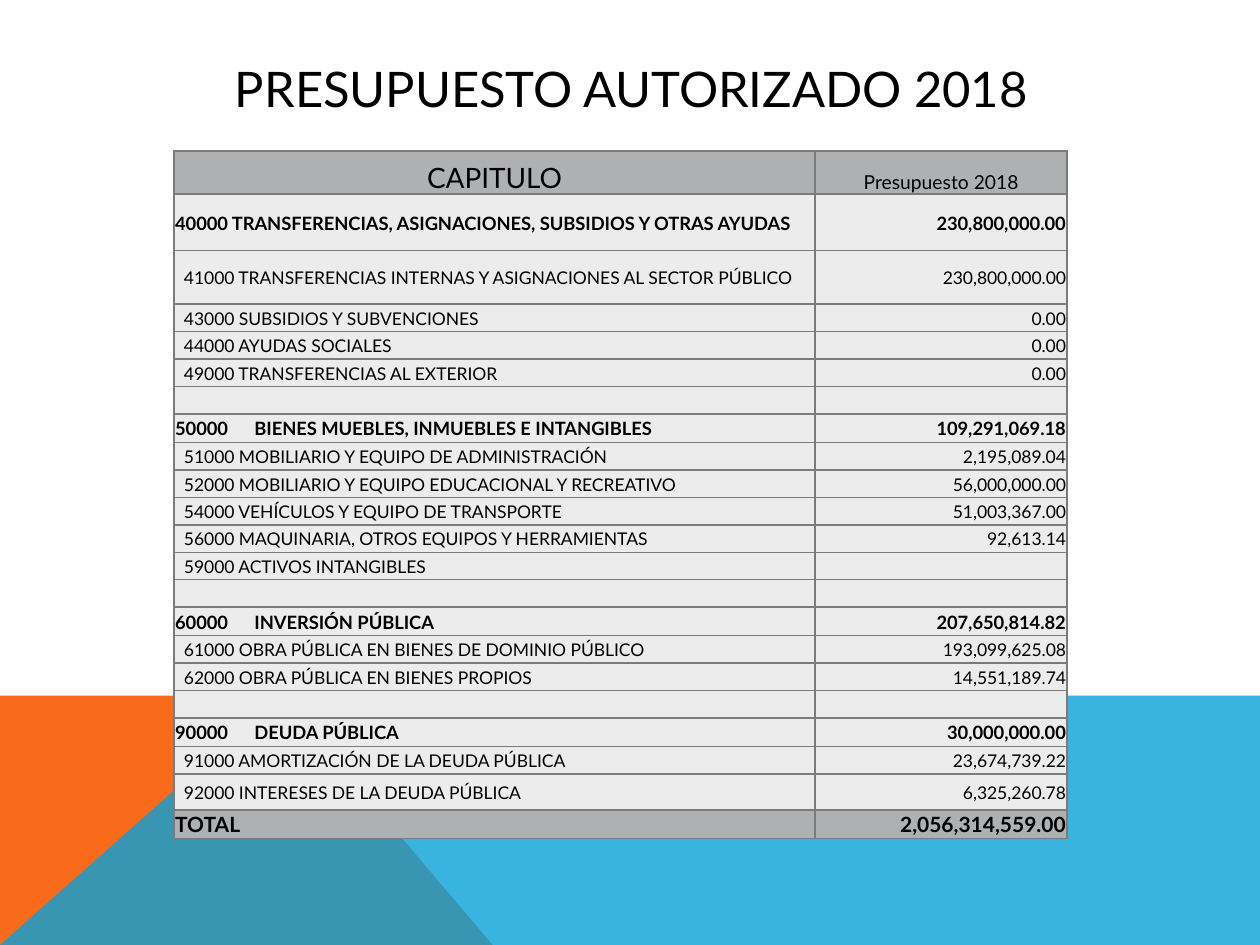
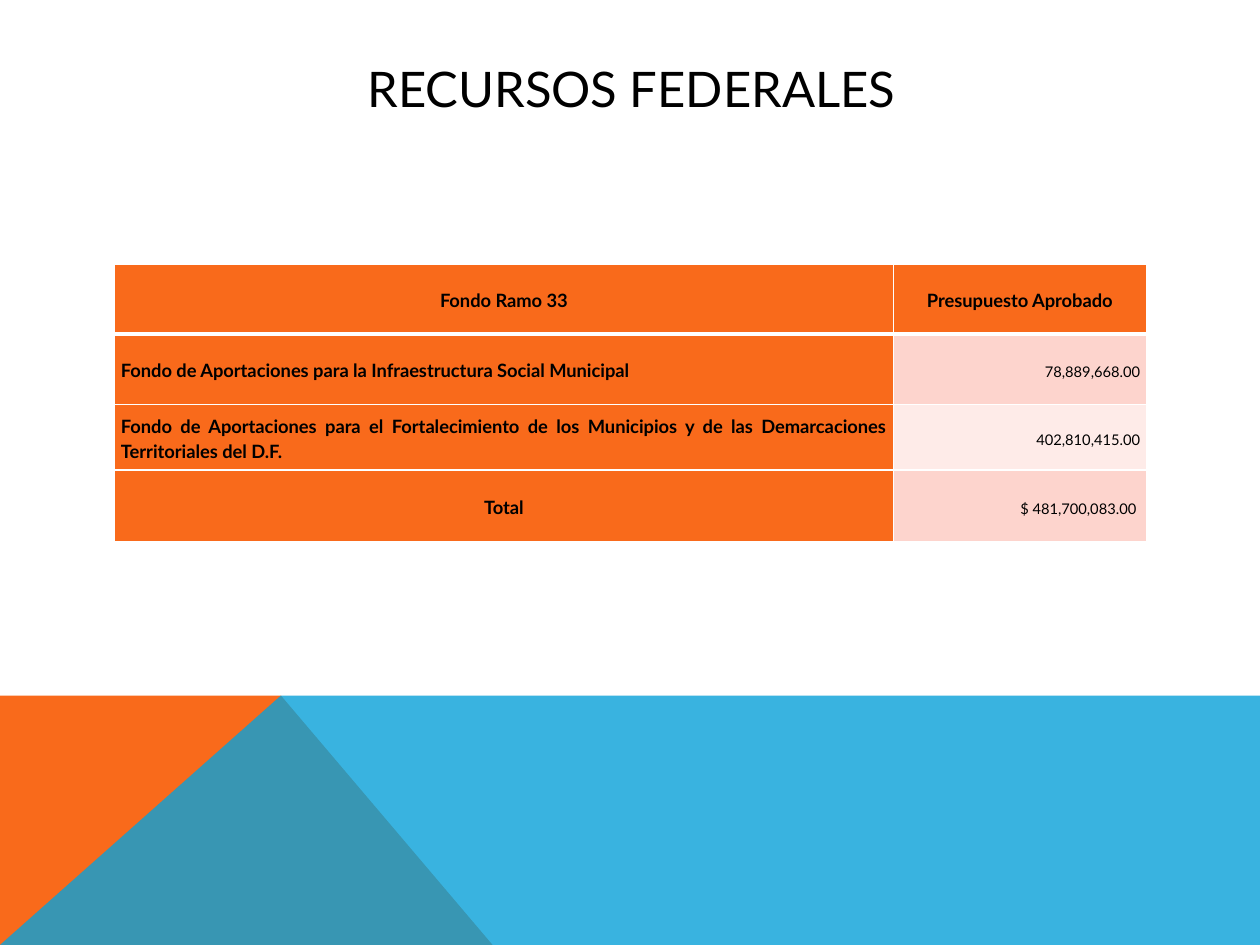
import dataclasses

import lxml.etree
import pptx
import pptx.dml.color
import pptx.enum.text
import pptx.oxml.ns
import pptx.util

qn = pptx.oxml.ns.qn
ALIGN = pptx.enum.text.PP_ALIGN
ANCHOR = pptx.enum.text.MSO_ANCHOR


@dataclasses.dataclass(frozen=True)
class Theme:
    font: str = "Lato"
    ink: str = "000000"
    orange: str = "F96A1B"
    blue: str = "08A1D9"
    white: str = "FFFFFF"
    rule: str = "797B7E"
    heading_gray: str = "AFB0B2"
    body_gray: str = "ECECEC"
    pink: str = "FDD4CD"
    pale_pink: str = "FEEBE8"
    title: float = 28
    chapter_header: float = 16
    total: float = 12
    budget_header: float = 11
    strong: float = 10.5
    detail: float = 10


theme = Theme()
deck = pptx.Presentation()
deck.slide_width, deck.slide_height = pptx.util.Inches(10), pptx.util.Inches(7.5)
COLUMNS = 100


def grid(count):
    return round(deck.slide_width * count / COLUMNS)


def fill_cell(cell, text, size, fill, rule, align=ALIGN.LEFT, bold=False, anchor=ANCHOR.MIDDLE,
              insets=(0.1, 0.1, 0.1, 0), indent=0, tab=0, spacing=1.0, small_caps=False,
              top=1, bottom=1):
    cell.margin_left, cell.margin_top, cell.margin_right, cell.margin_bottom = map(grid, insets)
    cell.vertical_anchor = anchor
    borders = cell._tc.get_or_add_tcPr()
    for side, width in (("L", 1), ("R", 1), ("T", top), ("B", bottom)):
        edge = lxml.etree.SubElement(borders, qn(f"a:ln{side}"), w=str(pptx.util.Pt(width)))
        paint = lxml.etree.SubElement(edge, qn("a:solidFill"))
        lxml.etree.SubElement(paint, qn("a:srgbClr"), val=rule)
    cell.fill.solid()
    cell.fill.fore_color.rgb = pptx.dml.color.RGBColor.from_string(fill)
    line = cell.text_frame.paragraphs[0]
    line.alignment = align
    line.line_spacing = spacing
    layout = line._p.get_or_add_pPr()
    layout.set("marL", str(grid(indent)))
    if tab:
        stops = lxml.etree.SubElement(layout, qn("a:tabLst"))
        lxml.etree.SubElement(stops, qn("a:tab"), pos=str(grid(tab)), algn="l")
    if not text:
        lxml.etree.SubElement(line._p, qn("a:endParaRPr"), sz=str(round(size * 100)))
        return
    words = line.add_run()
    words.text = text
    words.font.name, words.font.size, words.font.bold = theme.font, pptx.util.Pt(size), bold
    words.font.color.rgb = pptx.dml.color.RGBColor.from_string(theme.ink)
    if small_caps:
        words._r.get_or_add_rPr().set("cap", "small")


BAND_TOP, PEAK, BOTTOM = 55.2, 22.3, 75
bands = [
    (theme.orange, None, [(0, BOTTOM), (0, BAND_TOP), (PEAK, BAND_TOP), (39.1, BOTTOM)]),
    (theme.blue, 80, [(0, BOTTOM), (PEAK, BAND_TOP), (COLUMNS, BAND_TOP), (COLUMNS, BOTTOM)]),
]

slides = []
for heading in ("PRESUPUESTO AUTORIZADO 2018", "RECURSOS FEDERALES"):
    slide = deck.slides.add_slide(deck.slide_layouts[6])
    slides.append(slide)
    for color, opacity, corners in bands:
        points = [(grid(x), grid(y)) for x, y in corners]
        outline = slide.shapes.build_freeform(*points[0])
        outline.add_line_segments(points[1:], close=True)
        band = outline.convert_to_shape()
        band.shadow.inherit = False
        band.line.fill.background()
        band.fill.solid()
        band.fill.fore_color.rgb = pptx.dml.color.RGBColor.from_string(color)
        if opacity:
            tint = band._element.spPr.find(qn("a:solidFill"))[0]
            lxml.etree.SubElement(tint, qn("a:alpha"), val=str(opacity * 1000))
    title = slide.shapes.add_textbox(grid(9), grid(4), grid(82.2), grid(6)).text_frame
    title.word_wrap = True
    title.vertical_anchor = ANCHOR.MIDDLE
    title.paragraphs[0].alignment = ALIGN.CENTER
    title_words = title.paragraphs[0].add_run()
    title_words.text = heading
    title_words.font.name, title_words.font.size = theme.font, pptx.util.Pt(theme.title)
    title_words.font.color.rgb = pptx.dml.color.RGBColor.from_string(theme.ink)

chapters = [
    ("header", "CAPITULO", "Presupuesto 2018"),
    ("chapter", "40000 TRANSFERENCIAS, ASIGNACIONES, SUBSIDIOS Y OTRAS AYUDAS", "230,800,000.00"),
    ("item", "41000 TRANSFERENCIAS INTERNAS Y ASIGNACIONES AL SECTOR PÚBLICO", "230,800,000.00"),
    ("item", "43000 SUBSIDIOS Y SUBVENCIONES", "0.00"),
    ("item", "44000 AYUDAS SOCIALES", "0.00"),
    ("item", "49000 TRANSFERENCIAS AL EXTERIOR", "0.00"),
    ("item", "", ""),
    ("chapter", "50000\tBIENES MUEBLES, INMUEBLES E INTANGIBLES", "109,291,069.18"),
    ("item", "51000 MOBILIARIO Y EQUIPO DE ADMINISTRACIÓN", "2,195,089.04"),
    ("item", "52000 MOBILIARIO Y EQUIPO EDUCACIONAL Y RECREATIVO", "56,000,000.00"),
    ("item", "54000 VEHÍCULOS Y EQUIPO DE TRANSPORTE", "51,003,367.00"),
    ("item", "56000 MAQUINARIA, OTROS EQUIPOS Y HERRAMIENTAS", "92,613.14"),
    ("item", "59000 ACTIVOS INTANGIBLES", ""),
    ("item", "", ""),
    ("chapter", "60000\tINVERSIÓN PÚBLICA", "207,650,814.82"),
    ("item", "61000 OBRA PÚBLICA EN BIENES DE DOMINIO PÚBLICO", "193,099,625.08"),
    ("item", "62000 OBRA PÚBLICA EN BIENES PROPIOS", "14,551,189.74"),
    ("item", "", ""),
    ("chapter", "90000\tDEUDA PÚBLICA", "30,000,000.00"),
    ("item", "91000 AMORTIZACIÓN DE LA DEUDA PÚBLICA", "23,674,739.22"),
    ("item", "92000 INTERESES DE LA DEUDA PÚBLICA", "6,325,260.78"),
    ("total", "TOTAL", "2,056,314,559.00"),
]
styles = {
    "header": (theme.chapter_header, theme.budget_header, theme.heading_gray, False, 3.4),
    "chapter": (theme.strong, theme.strong, theme.body_gray, True, 2.27),
    "item": (theme.detail, theme.detail, theme.body_gray, False, 2.18),
    "total": (theme.total, theme.total, theme.heading_gray, True, 2.27),
}
tall_rows = {1: 4.5, 2: 4.25, 20: 2.85}

budget = slides[0].shapes.add_table(
    len(chapters), 2, grid(13.8), grid(12), grid(70.9), grid(54.6)).table
budget.first_row = budget.horz_banding = False
budget.columns[0].width, budget.columns[1].width = grid(50.9), grid(20)
for row, (role, concept, amount) in enumerate(chapters):
    concept_size, amount_size, fill, bold, height = styles[role]
    budget.rows[row].height = grid(tall_rows.get(row, height))
    is_header = role == "header"
    anchor = ANCHOR.BOTTOM if is_header else ANCHOR.MIDDLE
    fill_cell(budget.cell(row, 0), concept, concept_size, fill, theme.rule,
              ALIGN.CENTER if is_header else ALIGN.LEFT, bold, anchor,
              indent=0.7 if role == "item" else 0, tab=6.3 if "\t" in concept else 0)
    fill_cell(budget.cell(row, 1), amount, amount_size, fill, theme.rule,
              ALIGN.CENTER if is_header else ALIGN.RIGHT, bold, anchor)

funds = [
    ("Fondo Ramo 33", "Presupuesto Aprobado", ALIGN.CENTER, theme.orange, 5.5),
    ("Fondo de Aportaciones para la Infraestructura Social Municipal",
     "78,889,668.00", ALIGN.JUSTIFY, theme.pink, 5.6),
    ("Fondo de Aportaciones para el Fortalecimiento de los Municipios y de las "
     "Demarcaciones Territoriales del D.F.",
     "402,810,415.00", ALIGN.JUSTIFY, theme.pale_pink, 5.2),
    ("Total", "$ 481,700,083.00", ALIGN.CENTER, theme.pink, 5.7),
]
federal = slides[1].shapes.add_table(
    len(funds), 2, grid(9.1), grid(21), grid(81.9), grid(22)).table
federal.first_row = federal.horz_banding = False
federal.columns[0].width, federal.columns[1].width = grid(61.8), grid(20.1)
for row, (fund, amount, align, fill, height) in enumerate(funds):
    federal.rows[row].height = grid(height)
    is_header = row == 0
    right_inset = 0.8 if fund == "Total" else 0.5
    edges = {"top": 3 if row == 1 else 1, "bottom": 3 if is_header else 1, "spacing": 1.15}
    fill_cell(federal.cell(row, 0), fund, theme.strong, theme.orange, theme.white, align, True,
              insets=(0.5, 0, 0.5, 0), **edges)
    fill_cell(federal.cell(row, 1), amount, theme.strong, fill, theme.white,
              ALIGN.CENTER if is_header else ALIGN.RIGHT, is_header,
              insets=(0.5, 0, right_inset, 0), small_caps=not is_header, **edges)

deck.save("out.pptx")
